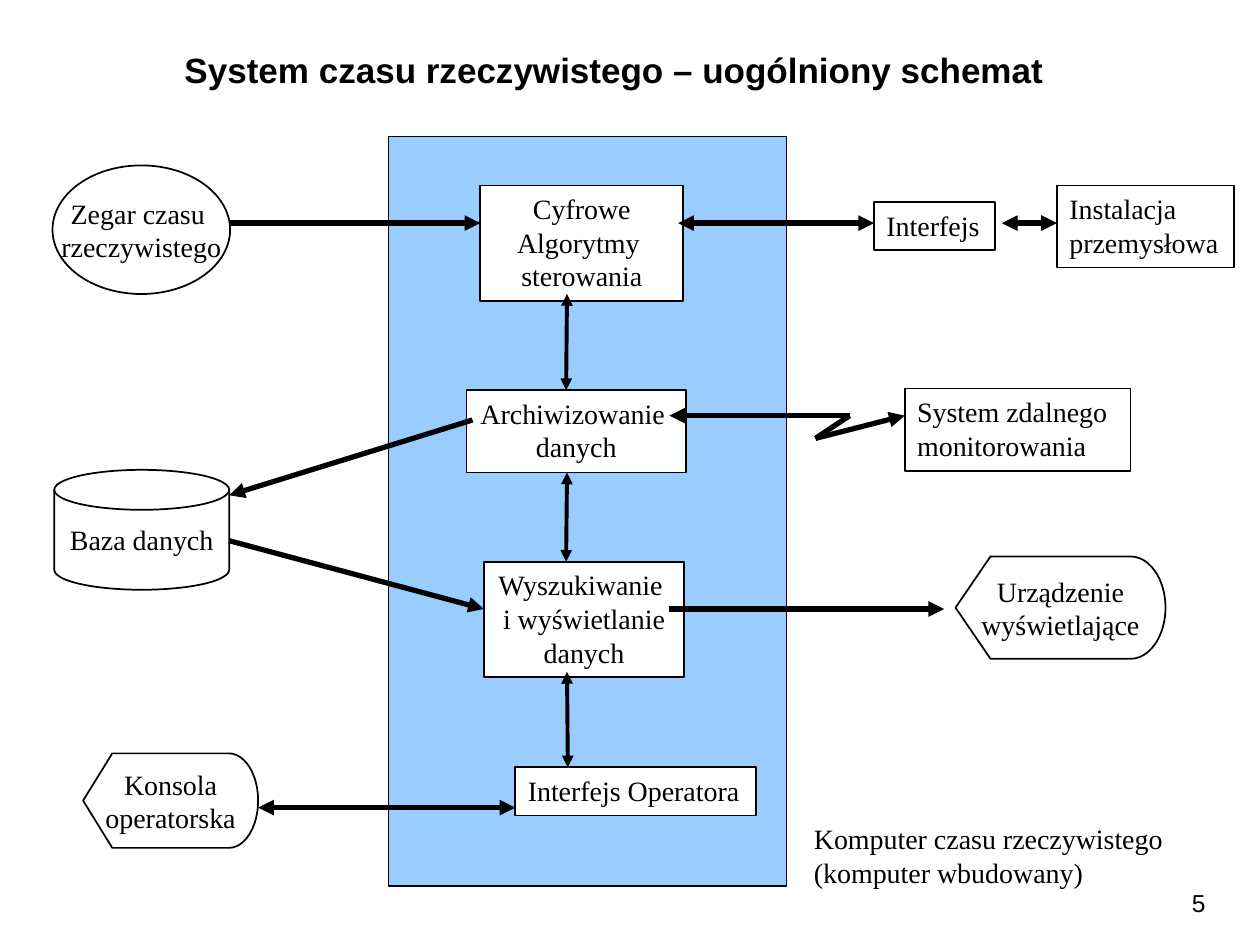
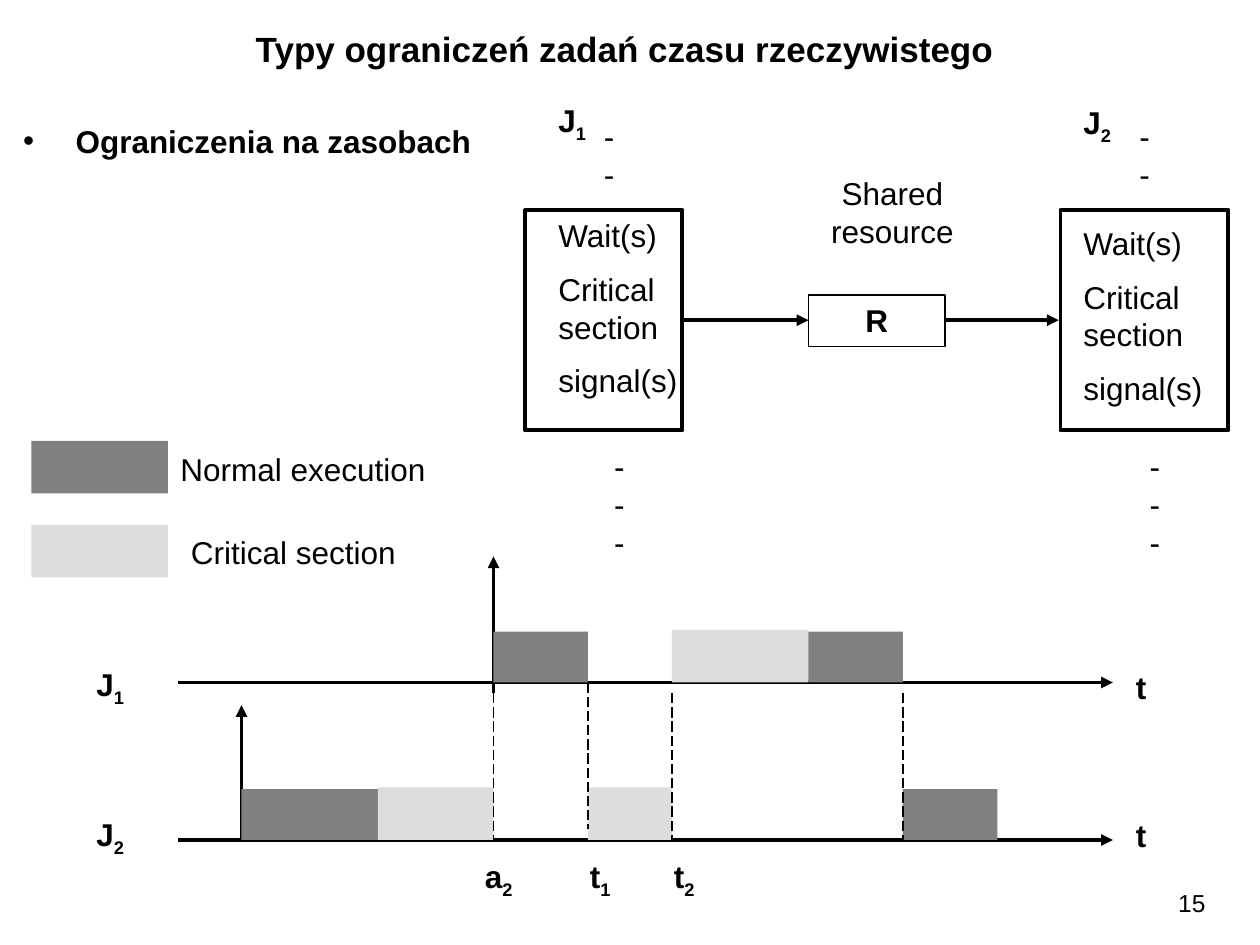
import dataclasses

import lxml.etree
import pptx
import pptx.dml.color
import pptx.enum.dml
import pptx.enum.shapes
import pptx.enum.text
import pptx.oxml.ns
import pptx.util

Pt = pptx.util.Pt
RGB = pptx.dml.color.RGBColor
SHAPE = pptx.enum.shapes.MSO_SHAPE
ALIGN = pptx.enum.text.PP_ALIGN
ANCHOR = pptx.enum.text.MSO_ANCHOR
qn = pptx.oxml.ns.qn


@dataclasses.dataclass(frozen=True)
class Theme:
    ink: RGB = RGB(0x00, 0x00, 0x00)
    paper: RGB = RGB(0xFF, 0xFF, 0xFF)
    computer: RGB = RGB(0x99, 0xCC, 0xFF)
    normal: RGB = RGB(0x80, 0x80, 0x80)
    critical: RGB = RGB(0xDD, 0xDD, 0xDD)
    sans: str = "Arial"
    serif: str = "Times New Roman"
    title_size: int = 20
    text_size: int = 18
    diagram_size: int = 16
    number_size: int = 14
    paragraph_gap: int = 9
    thin: float = 0.75
    outline: float = 1
    medium: float = 2.25
    thick: float = 3


THEME = Theme()


def write(frame, paragraphs, size=THEME.text_size, font=THEME.sans, bold=False,
          align=ALIGN.LEFT, anchor=ANCHOR.TOP, wrap=True, gap=0):
    frame.word_wrap = wrap
    frame.auto_size = pptx.enum.text.MSO_AUTO_SIZE.NONE
    frame.vertical_anchor = anchor
    for index, words in enumerate(paragraphs):
        paragraph = frame.add_paragraph() if index else frame.paragraphs[0]
        paragraph.text = words
        paragraph.alignment = align
        paragraph.space_before = Pt(gap if index else 0)
        paragraph.font.size = Pt(size)
        paragraph.font.name = font
        paragraph.font.bold = bold
        paragraph.font.color.rgb = THEME.ink


def place(element, left, top, width, height):
    element.left, element.top = Pt(left), Pt(top)
    element.width, element.height = Pt(width), Pt(height)


def add_text(slide, area, *paragraphs, **style):
    frame = slide.shapes.add_textbox(*map(Pt, area)).text_frame
    write(frame, paragraphs, **style)
    return frame


def add_symbol(slide, left, top, letter, index="", width=36):
    paragraph = add_text(slide, (left, top, width, 29), letter, bold=True).paragraphs[0]
    if index:
        subscript = paragraph.add_run()
        subscript.text = index
        subscript.font.size = Pt(THEME.text_size)
        subscript.font._element.set("baseline", "-25000")


def add_block(slide, area, kind=SHAPE.RECTANGLE, fill=None, line=None):
    block = slide.shapes.add_shape(kind, *map(Pt, area))
    block.shadow.inherit = False
    if fill is None:
        block.fill.background()
    else:
        block.fill.solid()
        block.fill.fore_color.rgb = fill
    if line is None:
        block.line.fill.background()
    else:
        block.line.color.rgb = THEME.ink
        block.line.width = Pt(line)
    return block


def add_node(slide, area, *paragraphs, kind=SHAPE.RECTANGLE, align=ALIGN.CENTER):
    node = add_block(slide, area, kind, THEME.paper, THEME.outline)
    anchor = ANCHOR.TOP if kind == SHAPE.RECTANGLE else ANCHOR.MIDDLE
    write(node.text_frame, paragraphs, THEME.diagram_size, THEME.serif,
          align=align, anchor=anchor, wrap=False)


def add_line(slide, start, end, width, ends=("tailEnd",), dashed=False):
    connector = slide.shapes.add_connector(
        pptx.enum.shapes.MSO_CONNECTOR.STRAIGHT, *map(Pt, start + end))
    connector.line.color.rgb = THEME.ink
    connector.line.width = Pt(width)
    if dashed:
        connector.line.dash_style = pptx.enum.dml.MSO_LINE.LONG_DASH
    properties = connector._element.spPr
    for end_tag in ends:
        lxml.etree.SubElement(properties.find(qn("a:ln")), qn("a:" + end_tag), type="triangle")
    lxml.etree.SubElement(properties, qn("a:effectLst"))


def start_slide(deck, layout, title, title_left, title_top, number):
    slide = deck.slides.add_slide(deck.slide_layouts[layout])
    place(slide.shapes.title, title_left, title_top, 678, 31)
    write(slide.shapes.title.text_frame, [title], THEME.title_size, bold=True,
          align=ALIGN.CENTER)
    add_text(slide, (630, 504, 66, 24), number, size=THEME.number_size, align=ALIGN.RIGHT)
    return slide


def build_system_scheme(deck):
    slide = start_slide(deck, 5, "System czasu rzeczywistego – uogólniony schemat", 12, 24, "5")
    add_block(slide, (222, 78, 227.5, 428.5), fill=THEME.computer, line=THEME.outline)

    add_node(slide, (274.5, 106, 116, 66), "Cyfrowe", "Algorytmy ", "sterowania")
    add_node(slide, (266.5, 223, 125.5, 47), "Archiwizowanie ", "danych")
    add_node(slide, (276.5, 321, 114.5, 66), "Wyszukiwanie ", "i wyświetlanie", "danych")
    for area, *words in (
        ((294.5, 438.5, 137.5, 27.5), "Interfejs Operatora"),
        ((499.5, 115.5, 69, 27.5), "Interfejs"),
        ((604, 106, 101, 47), "Instalacja", "przemysłowa"),
        ((517, 222, 129, 47), "System zdalnego", "monitorowania"),
    ):
        add_node(slide, area, *words, align=ALIGN.LEFT)
    add_node(slide, (30, 94.5, 101.5, 73.5), "Zegar czasu ", "rzeczywistego", kind=SHAPE.OVAL)
    add_node(slide, (31, 268.5, 100, 68.5), "Baza danych",
             kind=SHAPE.FLOWCHART_MAGNETIC_DISK)
    add_node(slide, (47.5, 430.5, 100, 54), "Konsola", "operatorska",
             kind=SHAPE.FLOWCHART_DISPLAY)
    add_node(slide, (546, 318, 120, 58.5), "Urządzenie", "wyświetlające",
             kind=SHAPE.FLOWCHART_DISPLAY)

    both = ("headEnd", "tailEnd")
    control_y, display_y, console_y = 127.5, 348, 461.5
    for start, end in (
        ((387.5, control_y), (499.5, control_y)),
        ((572.5, control_y), (604, control_y)),
        ((294.5, console_y), (147.5, console_y)),
    ):
        add_line(slide, start, end, THEME.thick, both)
    bolt_right, bolt_left = (485.5, 237.5), (466, 250.5)
    for start, end in (
        ((131, control_y), (274.5, control_y)),
        ((382.5, display_y), (539.5, display_y)),
        ((270, 240), (131, 283)),
        ((131, 309), (276.5, display_y)),
        (bolt_right, (382.5, 237.5)),
        (bolt_left, (517, 237.5)),
    ):
        add_line(slide, start, end, THEME.thick)
    add_line(slide, bolt_right, bolt_left, THEME.thick, ends=())
    for top, bottom_x, bottom in ((168, 323.5, 223), (270, 323.5, 321), (384, 324.5, 438.5)):
        add_line(slide, (324, top), (bottom_x, bottom), THEME.medium, both)

    add_text(slide, (458, 466, 214.5, 46), "Komputer czasu rzeczywistego",
             "(komputer wbudowany)", size=THEME.diagram_size, font=THEME.serif, wrap=False)


def add_task(slide, index, left, width, symbol_top, code_left, code_top, code_width):
    add_block(slide, (left, 120, width, 126), line=THEME.medium)
    add_text(slide, (code_left, code_top, code_width, 115), "Wait(s)", "Critical\nsection",
             "signal(s)", gap=THEME.paragraph_gap)
    add_text(slide, (left - 6, 63.5, 108, 50), "-\n-", align=ALIGN.CENTER)
    add_text(slide, (left, 252, 108, 72), "-\n-\n-", align=ALIGN.CENTER)
    add_symbol(slide, code_left, symbol_top, "J", index)


def add_timeline(slide, index, axis_y, origin, origin_y, symbol_top, time_top, bars):
    add_line(slide, (102, axis_y), (636, axis_y), THEME.medium)
    add_line(slide, (origin, origin_y), (origin, origin_y - 78), THEME.medium)
    add_symbol(slide, 48, symbol_top, "J", index)
    add_symbol(slide, 642, time_top, "t", width=30)
    for left, width, fill in bars:
        height = 29 if fill == THEME.normal else 30
        add_block(slide, (left, axis_y - height, width, height), fill=fill)


def build_resource_constraints(deck):
    slide = start_slide(deck, 1, "Typy ograniczeń zadań czasu rzeczywistego", 18, 12, "15")
    topic = slide.placeholders[1]
    place(topic, 6, 66, 702, 29)
    write(topic.text_frame, ["Ograniczenia na zasobach"], bold=True)
    indents = topic.text_frame.paragraphs[0]._p.get_or_add_pPr()
    indents.set("marL", str(Pt(30)))
    indents.set("indent", str(-Pt(30)))

    add_task(slide, "1", 300, 90, 54, 312, 120, 84)
    add_task(slide, "2", 606, 96, 55.5, 612, 124.5, 96)
    resource = add_block(slide, (462, 168.5, 78, 29.5), line=THEME.thin)
    write(resource.text_frame, ["R"], bold=True, align=ALIGN.CENTER)
    add_text(slide, (456, 96, 108, 50), "Shared resource", align=ALIGN.CENTER)
    for start_x, end_x in ((391, 462), (540, 605)):
        add_line(slide, (start_x, 183), (end_x, 183), THEME.medium)

    for fill, top, caption, caption_area in (
        (THEME.normal, 252, "Normal execution", (96, 253.5, 168, 29)),
        (THEME.critical, 300, "Critical section", (102, 301, 132, 29)),
    ):
        add_block(slide, (18, top, 78, 30), fill=fill)
        add_text(slide, caption_area, caption)

    normal, critical = THEME.normal, THEME.critical
    add_timeline(slide, "1", 390, 282, 396, 376.5, 378,
                 ((282, 54, normal), (384, 78, critical), (462, 54, normal)))
    add_timeline(slide, "2", 480, 138, 481, 462, 463,
                 ((138, 78, normal), (216, 66, critical), (336, 48, critical),
                  (516, 54, normal)))
    for moment, top in ((282, 396), (336, 390), (384, 396), (516, 396)):
        add_line(slide, (moment, top), (moment, top + 84), THEME.thin, ends=(), dashed=True)
    for left, letter, index in ((270, "a", "2"), (330, "t", "1"), (378, "t", "2")):
        add_symbol(slide, left, 486, letter, index)


def main():
    deck = pptx.Presentation()
    deck.slide_width, deck.slide_height = Pt(720), Pt(540)
    build_system_scheme(deck)
    build_resource_constraints(deck)
    deck.save("out.pptx")


if __name__ == "__main__":
    main()
